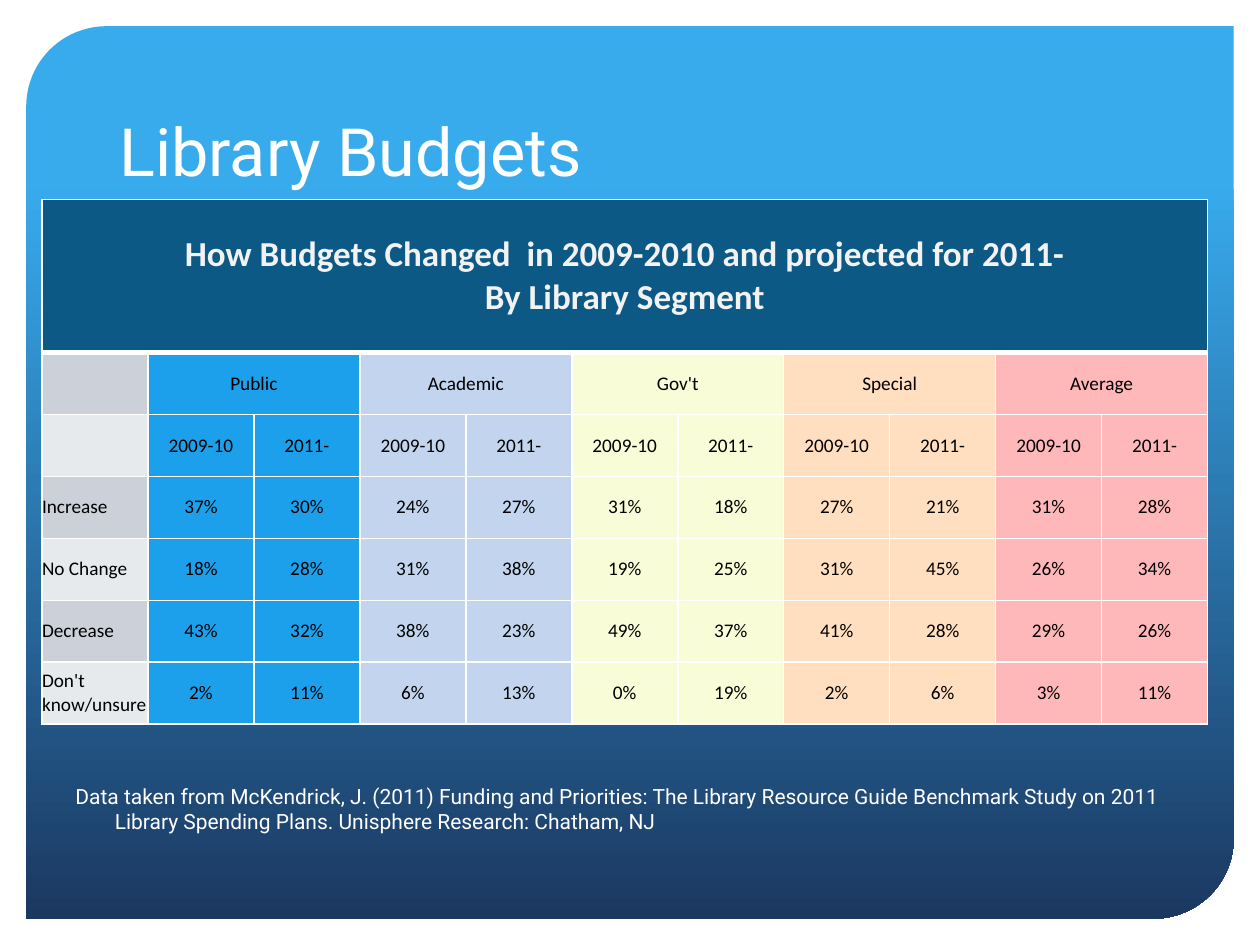
from lxml import etree
from pptx import Presentation, util as u
from pptx.dml.color import RGBColor
from pptx.enum import shapes, text
from pptx.oxml import ns

WHITE = RGBColor(0xFF, 0xFF, 0xFF)
BLACK = RGBColor(0, 0, 0)
SKY = RGBColor(0x38, 0xAB, 0xED)
NAVY = RGBColor(0x1B, 0x38, 0x61)
HEADER_FILL = RGBColor(0x0C, 0x59, 0x86)
HEADER_TEXT = RGBColor(0xF2, 0xF2, 0xF2)
LABEL_FILLS = [RGBColor(0xCC, 0xD1, 0xD9), RGBColor(0xE7, 0xEA, 0xED)]

SEGMENTS = [
    ("Public", RGBColor(0x1D, 0xA0, 0xEB)),
    ("Academic", RGBColor(0xC3, 0xD5, 0xEE)),
    ("Gov't", RGBColor(0xF8, 0xFD, 0xD8)),
    ("Special", RGBColor(0xFF, 0xDF, 0xBF)),
    ("Average", RGBColor(0xFF, 0xB8, 0xB9)),
]
PERIODS = ["2009-10", "2011-"]
BUDGET_CHANGES = {
    "Increase": [37, 30, 24, 27, 31, 18, 27, 21, 31, 28],
    "No Change": [18, 28, 31, 38, 19, 25, 31, 45, 26, 34],
    "Decrease": [43, 32, 38, 23, 49, 37, 41, 28, 29, 26],
    "Don't know/unsure": [2, 11, 6, 13, 0, 19, 2, 6, 3, 11],
}
HEADING = "How Budgets Changed  in 2009-2010 and projected for 2011-\nBy Library Segment"
SOURCE = ("Data taken from McKendrick, J. (2011) Funding and Priorities: "
          "The Library Resource Guide Benchmark Study on 2011 Library Spending Plans. "
          "Unisphere Research: Chatham, NJ")


class SlideBuilder:
    """Holds the fonts and the slide being filled; lengths are in points."""

    text_font = "Roboto"
    table_font = "Calibri"

    def __init__(self, slide):
        self.slide = slide

    def place(self, shape, left, top, width, height):
        shape.left, shape.top = u.Pt(left), u.Pt(top)
        shape.width, shape.height = u.Pt(width), u.Pt(height)

    def set_text(self, frame, content, font, size, color, alignment, bold=False):
        frame.text = content
        for paragraph in frame.paragraphs:
            paragraph.alignment = alignment
            paragraph.font.name = font
            paragraph.font.size = u.Pt(size)
            paragraph.font.color.rgb = color
            paragraph.font.bold = bold

    def title(self, content, *box):
        shape = self.slide.shapes.title
        self.place(shape, *box)
        frame = shape.text_frame
        frame.auto_size = text.MSO_AUTO_SIZE.NONE
        frame.vertical_anchor = text.MSO_ANCHOR.BOTTOM
        self.set_text(frame, content, self.text_font, 38, WHITE, text.PP_ALIGN.LEFT)

    def panel(self, *box):
        """Add the gradient panel behind everything else."""
        shape = self.slide.shapes.add_shape(
            shapes.MSO_SHAPE.ROUND_2_DIAG_RECTANGLE, *map(u.Pt, box))
        shape.adjustments[0], shape.adjustments[1] = 0.09, 0
        shape.shadow.inherit = False
        shape.line.fill.background()
        shape.fill.gradient()
        shape.fill.gradient_angle = 270
        for stop, position, color in zip(shape.fill.gradient_stops, (0.17, 1), (SKY, NAVY)):
            stop.position = position
            stop.color.rgb = color
        self.slide.shapes.title.element.addprevious(shape.element)

    def note(self, content, *box):
        """Add a paragraph with a hanging indent."""
        frame = self.slide.shapes.add_textbox(*map(u.Pt, box)).text_frame
        frame.word_wrap = True
        self.set_text(frame, content, self.text_font, 12, WHITE, text.PP_ALIGN.LEFT)
        properties = frame.paragraphs[0]._p.get_or_add_pPr()
        properties.set("marL", str(u.Pt(22.5)))
        properties.set("indent", str(u.Pt(-22.5)))

    def table(self, left, top, column_width, row_heights, column_count):
        table = self.slide.shapes.add_table(
            len(row_heights), column_count, u.Pt(left), u.Pt(top),
            u.Pt(column_width * column_count), u.Pt(sum(row_heights))).table
        table.first_row = table.horz_banding = False
        for column in table.columns:
            column.width = u.Pt(column_width)
        for row, height in zip(table.rows, row_heights):
            row.height = u.Pt(height)
        return table

    def borders(self, cell, bottom_width):
        properties = cell._tc.get_or_add_tcPr()
        for side, width in (("L", 1), ("R", 1), ("T", 1), ("B", bottom_width)):
            line = etree.SubElement(properties, ns.qn(f"a:ln{side}"), w=str(u.Pt(width)))
            fill = etree.SubElement(line, ns.qn("a:solidFill"))
            etree.SubElement(fill, ns.qn("a:srgbClr"), val=str(WHITE))

    def cell(self, cell, content, fill, size=11, color=BLACK, bold=False,
             alignment=text.PP_ALIGN.CENTER, bottom_width=1):
        self.borders(cell, bottom_width)
        cell.fill.solid()
        cell.fill.fore_color.rgb = fill
        cell.margin_left = cell.margin_right = cell.margin_top = cell.margin_bottom = 0
        cell.vertical_anchor = text.MSO_ANCHOR.MIDDLE
        self.set_text(cell.text_frame, content, self.table_font, size, color, alignment, bold)

    def budget_table(self, left, top):
        labels = ["", "", *BUDGET_CHANGES]
        column_count = 1 + len(SEGMENTS) * len(PERIODS)
        table = self.table(left, top, 60.55, [87.4] + [35.43] * len(labels), column_count)

        for column in range(column_count):
            self.cell(table.cell(0, column), "" if column else HEADING, HEADER_FILL,
                      20, HEADER_TEXT, True, bottom_width=3)
        table.cell(0, 0).merge(table.cell(0, column_count - 1))

        for index, label in enumerate(labels):
            self.cell(table.cell(index + 1, 0), label, LABEL_FILLS[index % 2],
                      alignment=text.PP_ALIGN.LEFT)

        for column in range(1, column_count):
            segment, period = divmod(column - 1, len(PERIODS))
            name, fill = SEGMENTS[segment]
            contents = ["" if period else name, PERIODS[period]]
            contents += [f"{values[column - 1]}%" for values in BUDGET_CHANGES.values()]
            for row, content in enumerate(contents, start=1):
                self.cell(table.cell(row, column), content, fill)
            if period:
                table.cell(1, column - 1).merge(table.cell(1, column))


def main():
    presentation = Presentation()
    presentation.slide_width, presentation.slide_height = u.Pt(720), u.Pt(540)
    builder = SlideBuilder(presentation.slides.add_slide(presentation.slide_layouts[5]))
    builder.panel(15, 15, 690, 510)
    builder.title("Library Budgets", 61, 30, 597, 82)
    builder.budget_table(24, 114)
    builder.note(SOURCE, 36, 444, 636, 38)
    presentation.save("out.pptx")


if __name__ == "__main__":
    main()
